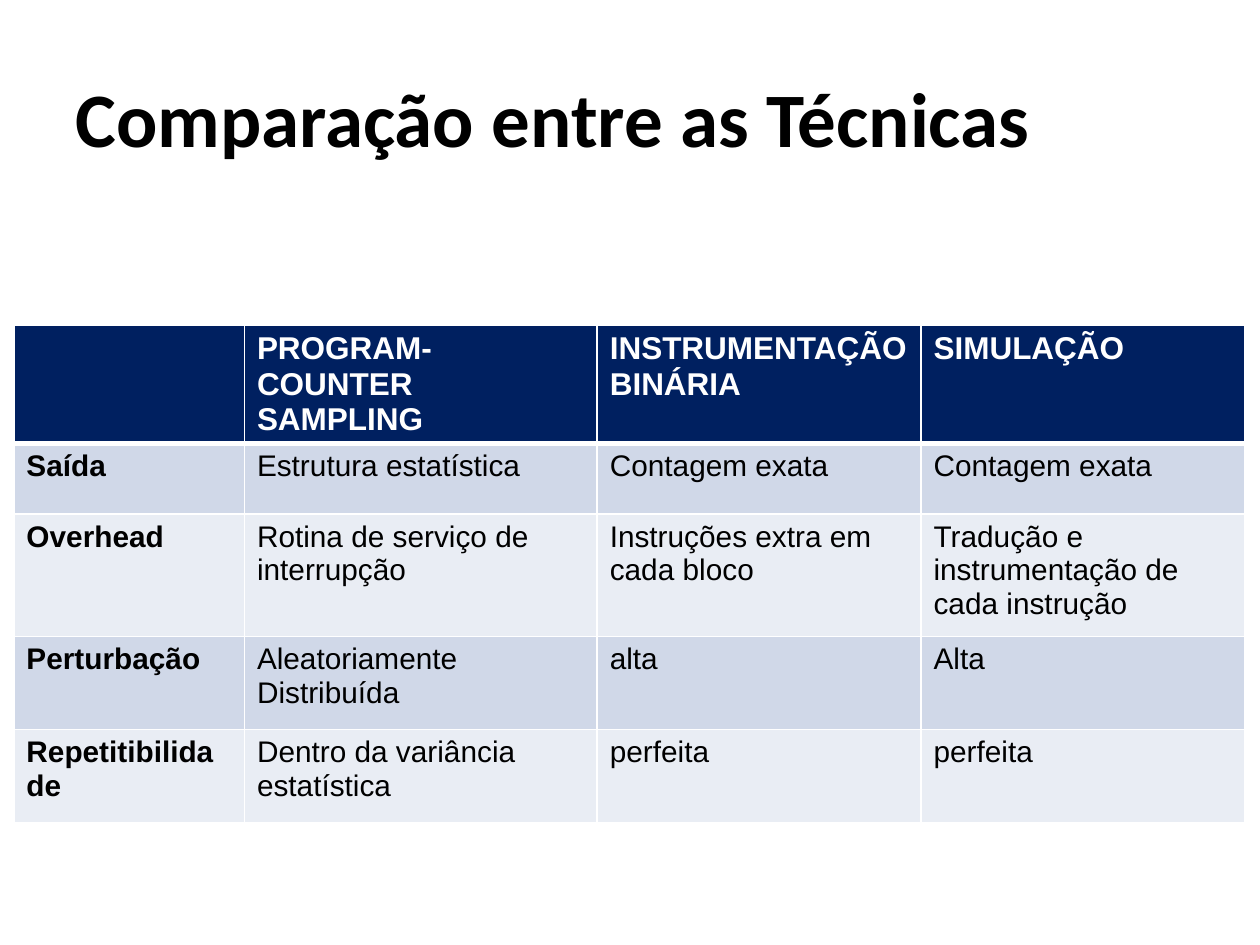
from typing import NamedTuple

from lxml.etree import SubElement
from pptx import Presentation
from pptx.dml.color import RGBColor
from pptx.enum.text import MSO_ANCHOR, PP_ALIGN
from pptx.oxml.ns import qn
from pptx.util import Inches, Pt

COLORS = {
    "header": "002060",
    "odd": "D0D8E8",
    "even": "E9EDF4",
    "border": "FFFFFF",
    "header_text": "FFFFFF",
    "text": "000000",
}


class CellStyle(NamedTuple):
    fill: str
    color: str
    size: float
    bold: bool
    top: float = 1
    bottom: float = 1


COLUMN_WIDTHS = [1.83, 2.8, 2.57, 2.57]
ROW_HEIGHTS = [0.78, 0.56, 0.97, 0.74, 0.74]
HEADER_RULE = 3
ROWS = [
    ["", "PROGRAM-COUNTER SAMPLING", "INSTRUMENTAÇÃO BINÁRIA", "SIMULAÇÃO"],
    ["Saída", "Estrutura estatística", "Contagem exata", "Contagem exata"],
    ["Overhead", "Rotina de serviço de interrupção", "Instruções extra em cada bloco",
     "Tradução e instrumentação de cada instrução"],
    ["Perturbação", "Aleatoriamente Distribuída", "alta", "Alta"],
    ["Repetitibilidade", "Dentro da variância estatística", "perfeita", "perfeita"],
]


def rgb(name: str) -> RGBColor:
    return RGBColor.from_string(COLORS[name])


def format_font(font, name: str, size: float, color: str, bold: bool) -> None:
    font.name = name
    font.size = Pt(size)
    font.bold = bold
    font.color.rgb = rgb(color)


def style_for(row: int, column: int) -> CellStyle:
    if row == 0:
        return CellStyle("header", "header_text", 18, True, bottom=HEADER_RULE)
    fill = "odd" if row % 2 else "even"
    return CellStyle(fill, "text", 17, column == 0, top=HEADER_RULE if row == 1 else 1)


def add_borders(cell, style: CellStyle) -> None:
    """Must run before the fill is set, as lines come first in the cell properties."""
    properties = cell._tc.get_or_add_tcPr()
    widths = {"a:lnL": 1, "a:lnR": 1, "a:lnT": style.top, "a:lnB": style.bottom}
    for tag, width in widths.items():
        line = SubElement(properties, qn(tag), w=str(Pt(width)))
        fill = SubElement(line, qn("a:solidFill"))
        SubElement(fill, qn("a:srgbClr"), val=COLORS["border"])


def fill_cell(cell, text: str, style: CellStyle) -> None:
    add_borders(cell, style)
    cell.fill.solid()
    cell.fill.fore_color.rgb = rgb(style.fill)
    cell.text_frame.text = text
    for run in cell.text_frame.paragraphs[0].runs:
        format_font(run.font, "Arial", style.size, style.color, style.bold)


def add_title(slide, text: str) -> None:
    title = slide.shapes.title
    title.left, title.top = Inches(0.5), Inches(0.3)
    title.width, title.height = Inches(9), Inches(1.25)
    title.text_frame.text = text
    title.text_frame.vertical_anchor = MSO_ANCHOR.MIDDLE
    paragraph = title.text_frame.paragraphs[0]
    paragraph.alignment = PP_ALIGN.LEFT
    format_font(paragraph.runs[0].font, "Calibri", 44, "text", True)


def add_comparison(slide) -> None:
    table = slide.shapes.add_table(
        len(ROWS), len(COLUMN_WIDTHS), Inches(0.11), Inches(2.58),
        Inches(sum(COLUMN_WIDTHS)), Inches(sum(ROW_HEIGHTS))).table
    for column, width in zip(table.columns, COLUMN_WIDTHS):
        column.width = Inches(width)
    for row, height in zip(table.rows, ROW_HEIGHTS):
        row.height = Inches(height)
    for row_index, texts in enumerate(ROWS):
        for column_index, text in enumerate(texts):
            fill_cell(table.cell(row_index, column_index), text,
                      style_for(row_index, column_index))


def main() -> None:
    presentation = Presentation()
    presentation.slide_width, presentation.slide_height = Inches(10), Inches(7.5)
    slide = presentation.slides.add_slide(presentation.slide_layouts[5])
    add_title(slide, "Comparação entre as Técnicas")
    add_comparison(slide)
    presentation.save("out.pptx")


if __name__ == "__main__":
    main()
